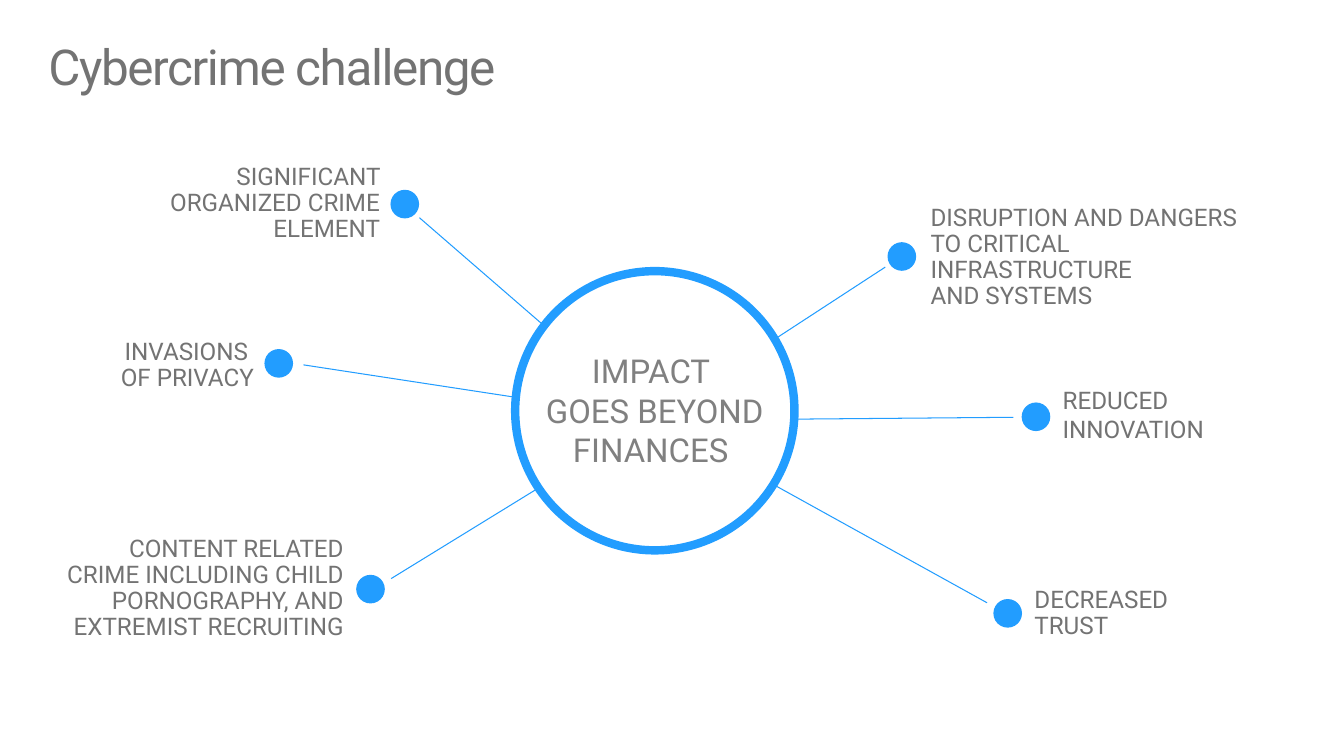
from dataclasses import dataclass

from lxml import etree
from pptx import Presentation
from pptx import util as u
from pptx.dml.color import RGBColor
from pptx.enum import shapes, text
from pptx.oxml.ns import qn

PX = 9144  # 100 px to the inch
FONT = "Roboto"
BLUE = RGBColor(0x22, 0x9D, 0xFF)
GREY = RGBColor(0x73, 0x73, 0x73)
MID_GREY = RGBColor(0x80, 0x80, 0x80)
WHITE = RGBColor(0xFF, 0xFF, 0xFF)
LEFT, CENTER, RIGHT = text.PP_ALIGN.LEFT, text.PP_ALIGN.CENTER, text.PP_ALIGN.RIGHT
DOT = 27
LABEL_INSETS = (20, 16)


@dataclass(frozen=True)
class Spoke:
    """One impact: its label, its dot's corner and the line towards the ring."""
    paragraphs: tuple[str, ...]
    area: tuple[int, int, int, int]
    dot: tuple[int, int]
    start: tuple[int, int]
    end: tuple[int, int]
    align: text.PP_ALIGN = LEFT
    spacing: float = 0.9


SPOKES = (
    Spoke(("SIGNIFICANT ORGANIZED CRIME ELEMENT",), (127, 154, 270, 96),
          (388, 189), (416, 216), (641, 411), RIGHT),
    Spoke(("DISRUPTION AND DANGERS", "TO CRITICAL INFRASTRUCTURE", "AND SYSTEMS"),
          (903, 172, 374, 167), (881, 241), (878, 265), (648, 415)),
    Spoke(("INVASIONS \vOF PRIVACY",), (31, 315, 241, 96),
          (263, 347), (301, 362), (641, 414), RIGHT),
    Spoke(("CONTENT RELATED CRIME INCLUDING CHILD PORNOGRAPHY, AND EXTREMIST RECRUITING",),
          (38, 515, 323, 138), (354, 571), (388, 574), (653, 411), RIGHT),
    Spoke(("REDUCED \vINNOVATION",), (1034, 368, 270, 87),
          (1014, 400), (1005, 414), (653, 417), spacing=1.0),
    Spoke(("DECREASED \vTRUST",), (1006, 574, 270, 70),
          (986, 595), (979, 598), (652, 417)),
)


def emu(*lengths: int) -> list[int]:
    return [length * PX for length in lengths]


def write(box, paragraphs: tuple[str, ...], *, size: float, color: RGBColor = GREY,
          align: text.PP_ALIGN = LEFT, spacing: float = 1.0,
          anchor: text.MSO_ANCHOR = text.MSO_ANCHOR.MIDDLE,
          insets: tuple[int, int] = LABEL_INSETS, tracking: int = 0) -> None:
    frame = box.text_frame
    frame.word_wrap = True
    frame.auto_size = text.MSO_AUTO_SIZE.NONE
    frame.vertical_anchor = anchor
    frame.margin_left = frame.margin_right = insets[0] * PX
    frame.margin_top = frame.margin_bottom = insets[1] * PX
    frame.text = "\n".join(paragraphs)
    for para in frame.paragraphs:
        para.alignment = align
        para.line_spacing = spacing
        para.space_before = u.Pt(0)
        for span in para.runs:
            span.font.name = FONT
            span.font.size = u.Pt(size)
            span.font.color.rgb = color
            if tracking:
                span.font._element.set("spc", str(tracking))


def add_label(page, area: tuple[int, int, int, int], paragraphs: tuple[str, ...],
              **style) -> None:
    write(page.shapes.add_textbox(*emu(*area)), paragraphs, **style)


def add_circle(page, left: int, top: int, size: int, fill: RGBColor, width: float) -> None:
    circle = page.shapes.add_shape(shapes.MSO_SHAPE.OVAL, *emu(left, top, size, size))
    circle.shadow.inherit = False
    circle.fill.solid()
    circle.fill.fore_color.rgb = fill
    circle.line.color.rgb = BLUE
    circle.line.width = u.Pt(width)


def add_line(page, start: tuple[int, int], end: tuple[int, int]) -> None:
    line = page.shapes.add_connector(shapes.MSO_CONNECTOR.STRAIGHT, *emu(*start, *end))
    line.line.color.rgb = BLUE
    line.line.width = u.Pt(0.75)
    etree.SubElement(line._element.spPr, qn("a:effectLst"))


def main() -> None:
    deck = Presentation()
    deck.slide_width, deck.slide_height = emu(1333, 750)
    page = deck.slides.add_slide(deck.slide_layouts[5])

    title = page.shapes.title
    title.left, title.top, title.width, title.height = emu(38, 37, 1250, 96)
    write(title, ("Cybercrime challenge",), size=35.3, spacing=0.9,
          anchor=text.MSO_ANCHOR.TOP, insets=(10, 5), tracking=-100)

    for spoke in SPOKES:
        add_label(page, spoke.area, spoke.paragraphs, size=17.3,
                  align=spoke.align, spacing=spoke.spacing)
        add_line(page, spoke.start, spoke.end)
        add_circle(page, *spoke.dot, DOT, BLUE, 1)

    # The ring covers the inner ends of the lines.
    add_circle(page, 511, 269, 277, WHITE, 6)
    add_label(page, (488, 292, 323, 230), ("IMPACT \vGOES BEYOND FINANCES ",),
              size=23.5, color=MID_GREY, align=CENTER)

    deck.save("out.pptx")


if __name__ == "__main__":
    main()
